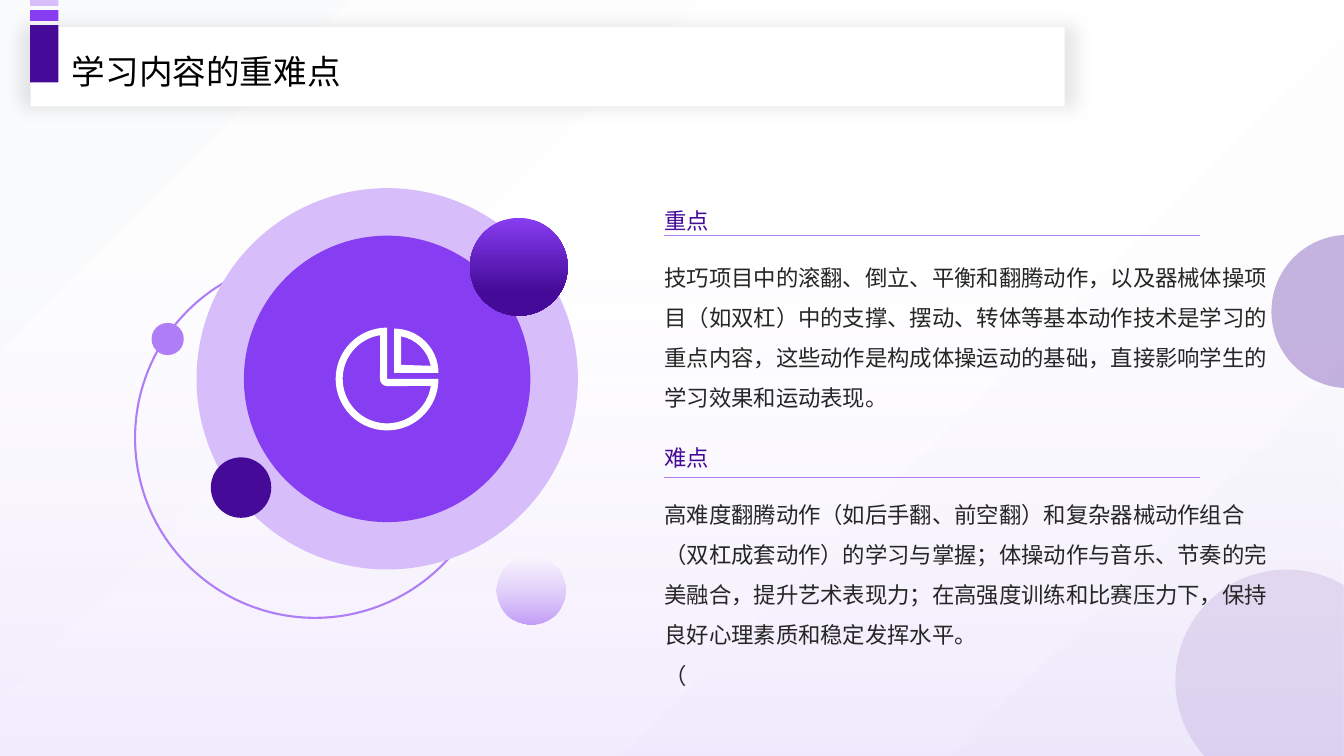
import math
from dataclasses import dataclass

import lxml.etree
import pptx
import pptx.dml.color
import pptx.enum.shapes
import pptx.enum.text
import pptx.oxml.ns
import pptx.util

COLS, ROWS = 160, 90
CELL = pptx.util.Inches(1) // 12
FONT = "Noto Sans CJK SC"
DEEP, VIVID, SOFT, PALE = "450B98", "873DF1", "AF7EF6", "D7BEFA"
WHITE, BLACK, INK = "FFFFFF", "000000", "262626"

qn = pptx.oxml.ns.qn
MSO = pptx.enum.shapes.MSO_SHAPE
ANCHOR = pptx.enum.text.MSO_ANCHOR
Point = tuple[float, float]


@dataclass(frozen=True)
class Stop:
    color: str
    pos: int = 0
    alpha: int = 100


@dataclass(frozen=True)
class Circle:
    col: float
    row: float
    size: float
    stops: tuple[Stop, ...] = ()
    outline: str = ""


@dataclass(frozen=True)
class Section:
    row: float
    rule_row: float
    body_rows: float
    heading: str
    body: tuple[str, ...]


@dataclass(frozen=True)
class Tab:
    row: float
    rows: float
    color: str


@dataclass(frozen=True)
class Node:
    at: Point
    controls: tuple[Point, ...] = ()


BACKDROP = (Stop("FAFBFC"), Stop(WHITE, 50), Stop("FAFBFC", 97))
VEIL = (Stop(PALE, 35, 0), Stop(SOFT, 100, 15))
TEXT_COL, HEAD_COLS, BODY_COLS = 79.1, 63.72, 72.24

EDGE_CIRCLES = (
    Circle(139.92, 67.8, 26.52, (Stop(DEEP, alpha=10),)),
    Circle(151.36, 27.96, 18.24, (Stop(DEEP, alpha=30),)),
)
ORBIT_CIRCLES = (
    Circle(16.08, 30.72, 42.84, outline=SOFT),
    Circle(23.4, 22.4, 45.4, (Stop(PALE),)),
    Circle(25.1, 54.45, 7.2, (Stop(DEEP),)),
    Circle(18.04, 38.44, 3.84, (Stop(SOFT),)),
    Circle(59.08, 66.12, 8.28, (Stop(PALE, 0, 0), Stop("C39EF8", 100))),
    Circle(29.04, 28.06, 34.1, (Stop(VIVID),)),
    Circle(55.94, 25.94, 11.64, (Stop(VIVID), Stop(DEEP, 75))),
)
SECTIONS = (
    Section(19.44, 28.08, 17.76, "重点", (
        "技巧项目中的滚翻、倒立、平衡和翻腾动作，以及器械体操项目（如双杠）中的支撑、摆动、"
        "转体等基本动作技术是学习的重点内容，这些动作是构成体操运动的基础，"
        "直接影响学生的学习效果和运动表现。",)),
    Section(47.64, 56.8, 18.6, "难点", (
        "高难度翻腾动作（如后手翻、前空翻）和复杂器械动作组合（双杠成套动作）的学习与掌握；"
        "体操动作与音乐、节奏的完美融合，提升艺术表现力；"
        "在高强度训练和比赛压力下，保持良好心理素质和稳定发挥水平。", "（")),
)
TABS = (Tab(3, 6.8, DEEP), Tab(1.2, 1.28, VIVID), Tab(0, 0.72, PALE))


def cells(*values: float) -> list[int]:
    return [round(v * CELL) for v in values]


def rgb(color: str) -> pptx.dml.color.RGBColor:
    return pptx.dml.color.RGBColor.from_string(color)


def add(parent, tag: str, **attrs):
    return lxml.etree.SubElement(parent, qn(tag), {k: str(v) for k, v in attrs.items()})


def add_color(parent, color: str, alpha: int = 100) -> None:
    node = add(parent, "a:srgbClr", val=color)
    if alpha < 100:
        add(node, "a:alpha", val=alpha * 1000)


def paint(fill, owner, stops: tuple[Stop, ...], angle: int = 90) -> None:
    if not stops:
        fill.background()
        return
    fill.solid()
    solid = next(owner.iter(qn("a:solidFill")))
    if len(stops) == 1:
        add_color(solid, stops[0].color, stops[0].alpha)
        return
    grad = lxml.etree.Element(qn("a:gradFill"), rotWithShape="1")
    stop_list = add(grad, "a:gsLst")
    for stop in stops:
        add_color(add(stop_list, "a:gs", pos=stop.pos * 1000), stop.color, stop.alpha)
    add(grad, "a:lin", ang=angle * 60000, scaled=0)
    solid.getparent().replace(solid, grad)


def finish(sp, stops: tuple[Stop, ...], outline: str = "") -> None:
    sp.shadow.inherit = False
    paint(sp.fill, sp.element.spPr, stops)
    if outline:
        sp.line.color.rgb = rgb(outline)
        sp.line.width = pptx.util.Pt(1.5)
    else:
        sp.line.fill.background()


def add_box(s, kind, box: tuple[float, ...], stops: tuple[Stop, ...], outline: str = ""):
    sp = s.shapes.add_shape(kind, *cells(*box))
    finish(sp, stops, outline)
    return sp


def add_circles(s, circles: tuple[Circle, ...]) -> None:
    for c in circles:
        add_box(s, MSO.OVAL, (c.col, c.row, c.size, c.size), c.stops, c.outline)


def write(tf, lines: tuple[str, ...], size: int, color: str, spacing: float, anchor) -> None:
    tf.word_wrap = True
    tf.auto_size = pptx.enum.text.MSO_AUTO_SIZE.NONE
    tf.vertical_anchor = anchor
    for i, line in enumerate(lines):
        p = tf.add_paragraph() if i else tf.paragraphs[0]
        p.alignment = pptx.enum.text.PP_ALIGN.LEFT
        p.line_spacing = spacing
        p.space_before = pptx.util.Pt(0)
        r = p.add_run()
        r.text = line
        r.font.size = pptx.util.Pt(size)
        r.font.color.rgb = rgb(color)
        r.font.name = FONT
        add(r.font._element, "a:ea", typeface=FONT)


def add_text(s, box: tuple[float, ...], lines: tuple[str, ...], color: str, spacing: float, anchor) -> None:
    tf = s.shapes.add_textbox(*cells(*box)).text_frame
    tf.margin_left = tf.margin_top = tf.margin_right = tf.margin_bottom = 0
    write(tf, lines, 16, color, spacing, anchor)


def add_section(s, sec: Section) -> None:
    add_text(s, (TEXT_COL, sec.row, HEAD_COLS, 8.4), (sec.heading,), DEEP, 1.3, ANCHOR.BOTTOM)
    add_text(s, (TEXT_COL, sec.row + 10.36, BODY_COLS, sec.body_rows), sec.body, INK, 1.5, ANCHOR.TOP)
    rule = s.shapes.add_connector(
        pptx.enum.shapes.MSO_CONNECTOR.STRAIGHT,
        *cells(TEXT_COL, sec.rule_row, TEXT_COL + HEAD_COLS, sec.rule_row))
    rule.line.color.rgb = rgb(SOFT)
    rule.line.width = pptx.util.Pt(0.5)
    add(rule.element.spPr, "a:effectLst")


def arc(center: Point, radius: float, start: int, end: int) -> list[Node]:
    pieces = math.ceil(abs(end - start) / 90)
    step = math.radians(end - start) / pieces
    pull = 4 / 3 * math.tan(step / 4)

    def spot(angle: float, lean: float = 0) -> Point:
        x, y = math.cos(angle), math.sin(angle)
        return center[0] + radius * (x - lean * y), center[1] + radius * (y + lean * x)

    turns = [math.radians(start) + step * i for i in range(pieces + 1)]
    return [Node(spot(turns[0]))] + [
        Node(spot(b), (spot(a, pull), spot(b, -pull))) for a, b in zip(turns, turns[1:])]


def add_pie_icon(s) -> None:
    hub, wedge = (46.08, 45.12), (46.92, 44.4)
    contours = (
        [Node(hub)] + arc(hub, 6.12, 0, 270),
        arc(hub, 5.28, 9, 261) + arc(hub, 0.84, 180, 90),
        [Node(wedge)] + arc(wedge, 5.28, 270, 360),
        [Node((47.76, 43.44))] + arc(wedge, 4.44, 281, 349),
    )
    builder = s.shapes.build_freeform(*cells(*contours[0][0].at))
    for i, contour in enumerate(contours):
        if i:
            builder.move_to(*cells(*contour[0].at))
        builder.add_line_segments([cells(*n.at) for n in contour[1:]], close=True)
    sp = builder.convert_to_shape()
    nodes = [n for contour in contours for n in contour[1:]]
    for line, node in zip(list(sp.element.spPr.iter(qn("a:lnTo"))), nodes):
        if node.controls:
            curve = lxml.etree.Element(qn("a:cubicBezTo"))
            for point in (*node.controls, node.at):
                x, y = cells(*point)
                add(curve, "a:pt", x=x - sp.left, y=y - sp.top)
            line.getparent().replace(line, curve)
    finish(sp, (Stop(WHITE),))


def add_header(s) -> None:
    card = add_box(s, MSO.RECTANGLE, (3.64, 3.22, 123.12, 9.44), (Stop(WHITE),))
    effects = card.element.spPr.find(qn("a:effectLst"))
    shadow = add(effects, "a:outerShdw", blurRad=pptx.util.Pt(13), dist=0, dir=0,
                 sx=102000, sy=102000, algn="ctr", rotWithShape=0)
    add_color(shadow, BLACK, 10)
    title = s.shapes.title
    title.left, title.top, title.width, title.height = cells(7.36, 5, 105.84, 6)
    write(title.text_frame, ("学习内容的重难点",), 24, BLACK, 1.1, ANCHOR.TOP)
    card.element.addnext(title.element)
    for tab in TABS:
        add_box(s, MSO.RECTANGLE, (3.6, tab.row, 3.36, tab.rows), (Stop(tab.color),))


def main() -> None:
    prs = pptx.Presentation()
    prs.slide_width, prs.slide_height = cells(COLS, ROWS)
    s = prs.slides.add_slide(prs.slide_layouts[5])
    paint(s.background.fill, s.element, BACKDROP, 45)
    add_box(s, MSO.RECTANGLE, (0, 0, COLS, ROWS), VEIL)
    add_circles(s, EDGE_CIRCLES)
    for sec in SECTIONS:
        add_section(s, sec)
    add_circles(s, ORBIT_CIRCLES)
    add_pie_icon(s)
    add_header(s)
    prs.save("out.pptx")


if __name__ == "__main__":
    main()
